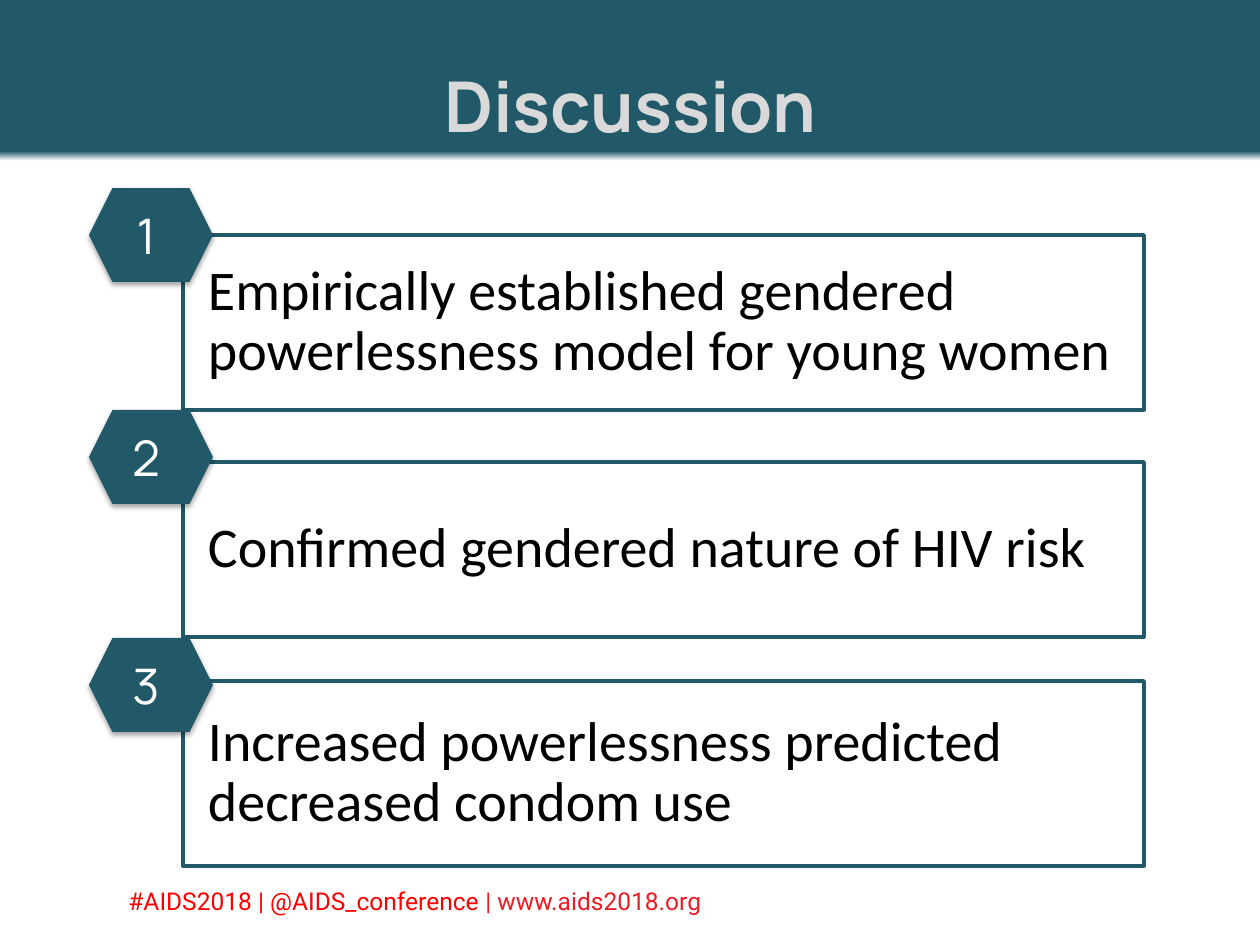
from dataclasses import dataclass

from lxml import etree
from pptx import Presentation, util as u
from pptx.dml.color import RGBColor
from pptx.enum import shapes, text
from pptx.oxml import ns

EMU_PER_PX = 914400 / 126


@dataclass(frozen=True)
class Theme:
    teal: str = "215968"
    white: str = "FFFFFF"
    black: str = "000000"
    title: str = "D9D9D9"
    hashtag: str = "FF0000"
    site: str = "ED1C24"
    title_pt: int = 40
    body_pt: int = 32
    number_pt: int = 28
    footer_pt: int = 14
    heading_font: str = "Manrope"
    body_font: str = "Calibri"
    footer_font: str = "Roboto"


@dataclass(frozen=True)
class Point:
    message: str
    box_top: int
    box_height: int
    badge_top: int


T = Theme()
POINTS = [
    Point("Empirically established gendered powerlessness model for young women", 235, 175, 188),
    Point("Confirmed gendered nature of HIV risk", 462, 175, 410),
    Point("Increased powerlessness predicted decreased condom use", 681, 185, 638),
]
BOX_LEFT, BOX_WIDTH, BOX_INSET = 183, 961, 25
BADGE_LEFT, BADGE_WIDTH, BADGE_HEIGHT = 89, 124, 94


def px(n: int) -> int:
    return round(n * EMU_PER_PX)


def rgb(color: str) -> RGBColor:
    return RGBColor.from_string(color)


def add_run(p, words: str, font: str, size: int, color: str, bold: bool = False) -> None:
    r = p.add_run()
    r.text = words
    r.font.name, r.font.size, r.font.bold = font, u.Pt(size), bold
    r.font.color.rgb = rgb(color)


def add_shadow(sp) -> None:
    """Soft shadow straight below the shape."""
    sp.shadow.inherit = False
    effects = sp._element.spPr.find(ns.qn("a:effectLst"))
    shadow = etree.SubElement(effects, ns.qn("a:outerShdw"), blurRad=str(u.Pt(3.1)),
                              dist=str(u.Pt(1.8)), dir="5400000", rotWithShape="0")
    color = etree.SubElement(shadow, ns.qn("a:srgbClr"), val=T.black)
    etree.SubElement(color, ns.qn("a:alpha"), val="35000")


def add_box(s, point: Point) -> None:
    sp = s.shapes.add_shape(shapes.MSO_SHAPE.RECTANGLE, px(BOX_LEFT), px(point.box_top),
                            px(BOX_WIDTH), px(point.box_height))
    sp.shadow.inherit = False
    sp.fill.solid()
    sp.fill.fore_color.rgb = rgb(T.white)
    sp.line.color.rgb = rgb(T.teal)
    sp.line.width = u.Pt(2)
    tf = sp.text_frame
    tf.word_wrap = True
    tf.vertical_anchor = text.MSO_ANCHOR.MIDDLE
    tf.margin_left = tf.margin_right = tf.margin_top = tf.margin_bottom = px(BOX_INSET)
    p = tf.paragraphs[0]
    p.alignment = text.PP_ALIGN.LEFT
    p.line_spacing = 0.9
    add_run(p, point.message, T.body_font, T.body_pt, T.black)


def add_badge(s, number: int, top: int) -> None:
    sp = s.shapes.add_shape(shapes.MSO_SHAPE.HEXAGON, px(BADGE_LEFT), px(top),
                            px(BADGE_WIDTH), px(BADGE_HEIGHT))
    sp.fill.solid()
    sp.fill.fore_color.rgb = rgb(T.teal)
    sp.line.fill.background()
    add_shadow(sp)
    tf = sp.text_frame
    tf.vertical_anchor = text.MSO_ANCHOR.MIDDLE
    p = tf.paragraphs[0]
    p.alignment = text.PP_ALIGN.CENTER
    add_run(p, f"{number} ", T.heading_font, T.number_pt, T.white)


def set_background(s) -> None:
    """Teal band over white, running from top to bottom."""
    fill = s.background.fill
    fill.gradient()
    fill.gradient_angle = 270
    for stop, position, color in zip(fill.gradient_stops, (0.16, 0.17), (T.teal, T.white)):
        stop.position = position
        stop.color.rgb = rgb(color)


def set_title(s, words: str) -> None:
    sp = s.shapes.title
    sp.left, sp.top, sp.width, sp.height = px(78), px(25), px(1105), px(158)
    tf = sp.text_frame
    tf.auto_size = text.MSO_AUTO_SIZE.NONE
    tf.vertical_anchor = text.MSO_ANCHOR.MIDDLE
    p = tf.paragraphs[0]
    p.alignment = text.PP_ALIGN.CENTER
    add_run(p, words, T.heading_font, T.title_pt, T.title, bold=True)


def add_footer(s) -> None:
    tf = s.shapes.add_textbox(px(116), px(880), px(926), px(43)).text_frame
    tf.word_wrap = True
    p = tf.paragraphs[0]
    add_run(p, "#AIDS2018 | @AIDS_conference ", T.footer_font, T.footer_pt, T.hashtag)
    add_run(p, "| www.aids2018.org", T.footer_font, T.footer_pt, T.site)


def main() -> None:
    prs = Presentation()
    prs.slide_width, prs.slide_height = u.Inches(10), u.Inches(7.5)
    s = prs.slides.add_slide(prs.slide_layouts[5])

    # Band, footer and heading
    set_background(s)
    add_footer(s)
    set_title(s, "Discussion")

    # Boxes first, so that the numbered badges lie on top
    for point in POINTS:
        add_box(s, point)
    for number, point in enumerate(POINTS, start=1):
        add_badge(s, number, point.badge_top)

    prs.save("out.pptx")


if __name__ == "__main__":
    main()
